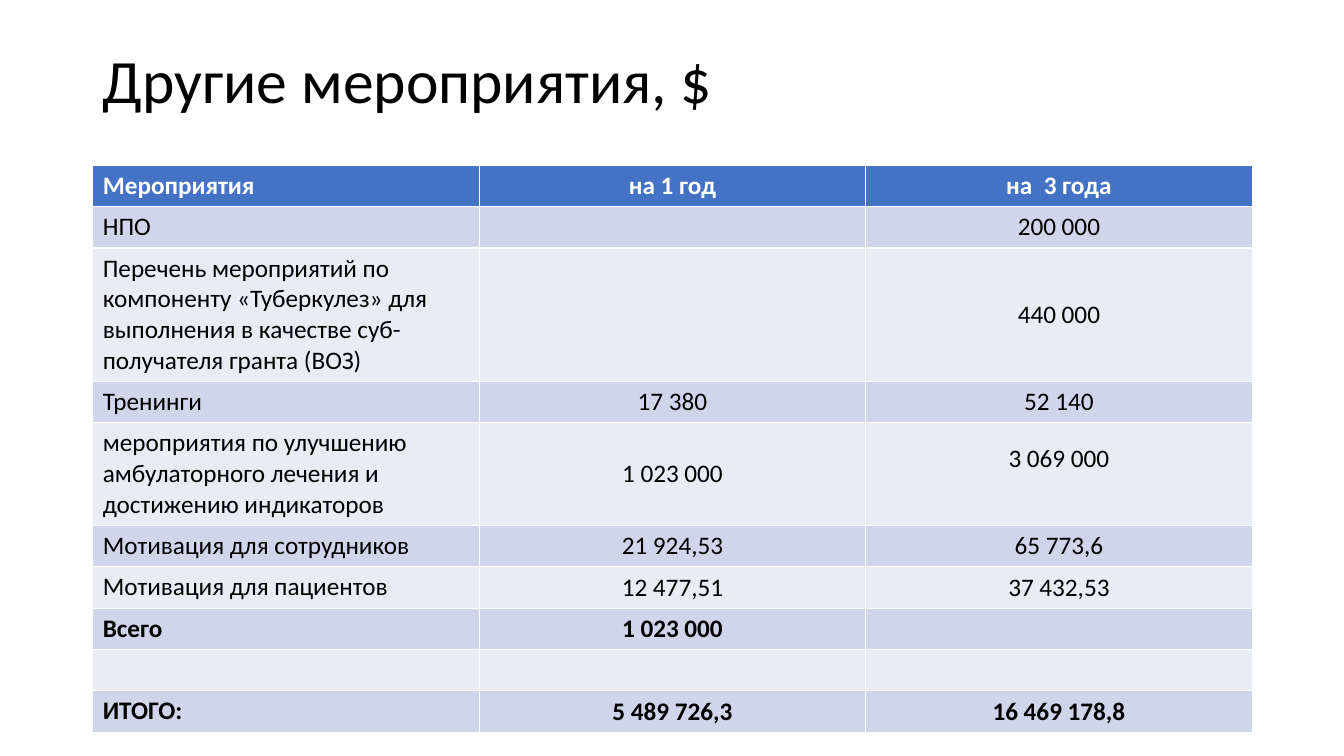
import dataclasses

import pptx
import pptx.dml.color
import pptx.enum.text
import pptx.util

Inches = pptx.util.Inches
ALIGN = pptx.enum.text.PP_ALIGN
ANCHOR = pptx.enum.text.MSO_ANCHOR


@dataclasses.dataclass(frozen=True)
class Theme:
    font: str = "Calibri"
    title_size: int = 44
    table_size: int = 18
    text: str = "000000"
    header_text: str = "FFFFFF"
    header_fill: str = "4472C4"
    odd_fill: str = "CFD5EA"
    even_fill: str = "E9EBF5"


THEME = Theme()
LINE_HEIGHT = 0.305
CELL_PADDING = 0.105
RAISED_MARGIN = 0.35  # bottom margin that lifts a value by half a line

# Activity, first year, three years, lines of text in the row
BUDGET = [
    ("Мероприятия", "на 1 год", "на  3 года", 1),
    ("НПО", "", "200 000", 1),
    ("Перечень мероприятий по компоненту «Туберкулез» для выполнения "
     "в качестве суб-получателя гранта (ВОЗ)", "", "440 000", 4),
    ("Тренинги", "17 380", "52 140", 1),
    ("мероприятия по улучшению амбулаторного лечения и достижению индикаторов",
     "1 023 000", "3 069 000", 3),
    ("Мотивация для сотрудников", "21 924,53", "65 773,6", 1),
    ("Мотивация для пациентов", "12 477,51", "37 432,53", 1),
    ("Всего", "1 023 000", "", 1),
    ("", "", "", 1),
    ("ИТОГО:", "5 489 726,3", "16 469 178,8", 1),
]
BOLD_ACTIVITIES = {"Мероприятия", "Всего", "ИТОГО:"}
RAISED_VALUE = "3 069 000"


def rgb(value):
    return pptx.dml.color.RGBColor.from_string(value)


def style_paragraph(paragraph, size, color, bold, align):
    paragraph.alignment = align
    font = paragraph.font
    font.name = THEME.font
    font.size = pptx.util.Pt(size)
    font.bold = bold
    font.color.rgb = rgb(color)


def place_title(slide, text, left, top, width, height):
    title = slide.shapes.title
    title.left, title.top = Inches(left), Inches(top)
    title.width, title.height = Inches(width), Inches(height)
    title.text_frame.text = text
    title.text_frame.vertical_anchor = ANCHOR.MIDDLE
    heading = title.text_frame.paragraphs[0]
    heading.line_spacing = 0.9
    style_paragraph(heading, THEME.title_size, THEME.text, False, ALIGN.LEFT)


def fill_cell(cell, text, row, column, bold):
    if row == 0:
        background, color = THEME.header_fill, THEME.header_text
    else:
        background = THEME.odd_fill if row % 2 else THEME.even_fill
        color = THEME.text
    cell.fill.solid()
    cell.fill.fore_color.rgb = rgb(background)
    cell.text = text
    cell.vertical_anchor = ANCHOR.MIDDLE if column else ANCHOR.TOP
    if text == RAISED_VALUE:
        cell.margin_bottom = Inches(RAISED_MARGIN)
    style_paragraph(cell.text_frame.paragraphs[0], THEME.table_size, color, bold,
                    ALIGN.CENTER if column else ALIGN.LEFT)


def place_budget(slide, left, top, width):
    heights = [lines * LINE_HEIGHT + CELL_PADDING for *_, lines in BUDGET]
    budget = slide.shapes.add_table(
        len(BUDGET), 3, Inches(left), Inches(top), Inches(width), Inches(sum(heights))
    ).table
    for column in budget.columns:
        column.width = Inches(width / 3)
    for row, (*texts, _) in enumerate(BUDGET):
        budget.rows[row].height = Inches(heights[row])
        for column, text in enumerate(texts):
            fill_cell(budget.cell(row, column), text, row, column,
                      texts[0] in BOLD_ACTIVITIES)


def main():
    deck = pptx.Presentation()
    deck.slide_width, deck.slide_height = Inches(13.33), Inches(7.5)
    slide = deck.slides.add_slide(deck.slide_layouts[5])
    # Heading
    place_title(slide, "Другие мероприятия, $", 0.92, 0.4, 11.5, 0.86)
    # Budget table
    place_budget(slide, 0.92, 1.64, 11.5)
    deck.save("out.pptx")


if __name__ == "__main__":
    main()
